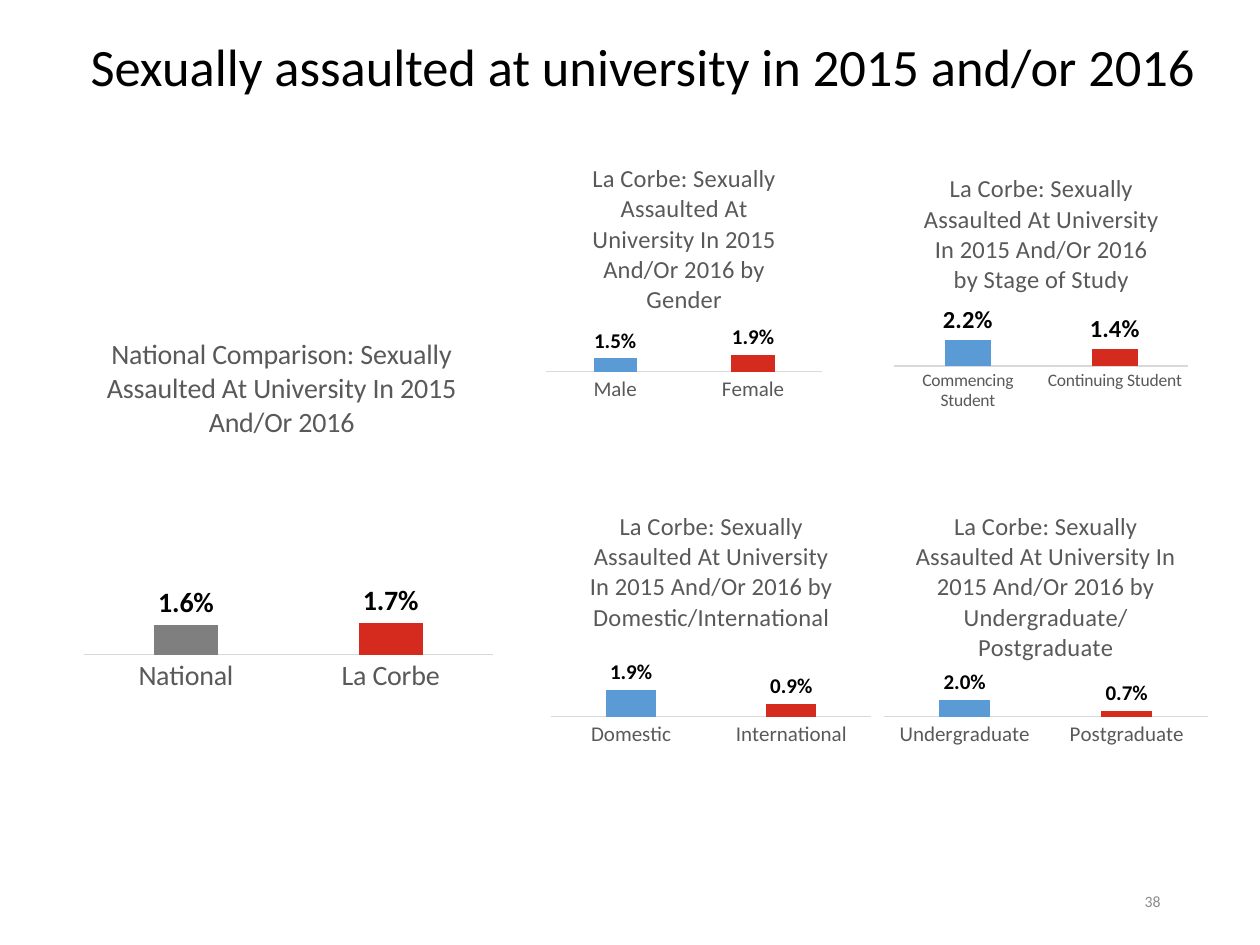
import dataclasses

import pptx
import pptx.chart.data
import pptx.dml.color
import pptx.enum.chart
import pptx.enum.text
import pptx.util
from lxml import etree

CHART = pptx.enum.chart
TEXT = pptx.enum.text


@dataclasses.dataclass(frozen=True)
class Theme:
    font: str = "Calibri"
    ink: str = "000000"
    soft_ink: str = "595959"
    page_ink: str = "8C8C8C"
    axis: str = "D9D9D9"
    blue: str = "5B9BD5"
    grey: str = "7F7F7F"
    red: str = "D52B1E"
    heading: int = 30
    large: int = 16
    medium: int = 14
    small: int = 12
    tiny: int = 10
    page: int = 9


@dataclasses.dataclass
class Panel:
    """One comparison; box is in percent of the slide, plot in shares of the box."""
    subject: str
    box: tuple
    plot: tuple
    categories: tuple
    values: tuple
    first_colour: str
    title_size: int
    label_size: int
    category_size: int
    ceiling: float = 0.05


class Deck:
    def __init__(self, theme):
        self.theme = theme
        self.show = pptx.Presentation()
        self.show.slide_width = pptx.util.Inches(10)
        self.show.slide_height = pptx.util.Inches(7.5)
        self.slide = None

    def place(self, left, top, width, height):
        """Turn percentages of the slide into lengths."""
        across, down = self.show.slide_width / 100, self.show.slide_height / 100
        return int(left * across), int(top * down), int(width * across), int(height * down)

    def style(self, font, size, colour, bold=False):
        font.name = self.theme.font
        font.size = pptx.util.Pt(size)
        font.bold = bold
        font.color.rgb = pptx.dml.color.RGBColor.from_string(colour)

    def set_text(self, shape, words, size, colour, align):
        frame = shape.text_frame
        frame.text = words
        frame.word_wrap = True
        frame.vertical_anchor = TEXT.MSO_ANCHOR.MIDDLE
        paragraph = frame.paragraphs[0]
        paragraph.alignment = align
        self.style(paragraph.font, size, colour)
        return paragraph

    def add_slide(self, heading, box):
        self.slide = self.show.slides.add_slide(self.show.slide_layouts.get_by_name("Title Only"))
        title = self.slide.shapes.title
        title.left, title.top, title.width, title.height = self.place(*box)
        paragraph = self.set_text(title, heading, self.theme.heading, self.theme.ink,
                                  TEXT.PP_ALIGN.CENTER)
        paragraph.line_spacing = 0.9

    def add_page_number(self, number, box):
        self.set_text(self.slide.shapes.add_textbox(*self.place(*box)), number,
                      self.theme.page, self.theme.page_ink, TEXT.PP_ALIGN.RIGHT)

    def add_panel(self, panel):
        data = pptx.chart.data.CategoryChartData(number_format="0.0%")
        data.categories = panel.categories
        data.add_series("Series 1", panel.values)
        chart = self.slide.shapes.add_chart(
            CHART.XL_CHART_TYPE.COLUMN_CLUSTERED, *self.place(*panel.box), data).chart
        self.style(chart.font, self.theme.tiny, self.theme.ink)
        chart.has_legend = False
        chart.chart_title.text_frame.text = panel.subject
        self.style(chart.chart_title.text_frame.paragraphs[0].font,
                   panel.title_size, self.theme.soft_ink)
        chart.chart_title.include_in_layout = False
        self.set_axes(chart, panel)
        self.set_columns(chart.plots[0], panel)
        self.set_plot_area(chart, panel.plot)

    def set_axes(self, chart, panel):
        scale = chart.value_axis
        scale.minimum_scale, scale.maximum_scale = 0, panel.ceiling
        scale.has_major_gridlines = False
        scale.visible = False
        base = chart.category_axis
        base.major_tick_mark = CHART.XL_TICK_MARK.NONE
        base.format.line.width = pptx.util.Pt(0.75)
        base.format.line.color.rgb = pptx.dml.color.RGBColor.from_string(self.theme.axis)
        self.style(base.tick_labels.font, panel.category_size, self.theme.soft_ink)

    def set_columns(self, plot, panel):
        plot.gap_width, plot.overlap = 219, -27
        plot.vary_by_categories = False
        series = plot.series[0]
        fills = [series.format.fill] + [series.points[i].format.fill for i in range(2)]
        for fill, colour in zip(fills, (self.theme.blue, panel.first_colour, self.theme.red)):
            fill.solid()
            fill.fore_color.rgb = pptx.dml.color.RGBColor.from_string(colour)
        labels = series.data_labels
        labels.show_value = True
        labels.number_format, labels.number_format_is_linked = "0.0%", False
        labels.position = CHART.XL_LABEL_POSITION.OUTSIDE_END
        self.style(labels.font, panel.label_size, self.theme.ink, bold=True)

    def set_plot_area(self, chart, shares):
        area = chart.plots[0]._element.getparent()
        space = area.nsmap["c"]
        for old in area.findall(f"{{{space}}}layout"):
            area.remove(old)
        layout = etree.Element(f"{{{space}}}layout")
        manual = etree.SubElement(layout, f"{{{space}}}manualLayout")
        settings = [("layoutTarget", "inner"), ("xMode", "edge"), ("yMode", "edge")]
        for name, value in settings + list(zip("xywh", shares)):
            etree.SubElement(manual, f"{{{space}}}{name}").set("val", str(value))
        area.insert(0, layout)


def main():
    theme = Theme()
    deck = Deck(theme)
    deck.add_slide("Sexually assaulted at university in 2015 and/or 2016",
                   (4.4, 2.53, 93.3, 9.73))
    topic = "Sexually Assaulted At University In 2015 And/Or 2016"
    deck.add_panel(Panel(
        f"National Comparison: {topic}", (4.5, 33.2, 35.7, 48.13), (0.06, 0.34, 0.91, 0.41),
        ("National", "La Corbe"), (0.016, 0.017), theme.grey,
        theme.large, theme.large, theme.large, ceiling=0.1))

    height = 27.6
    breakdowns = [
        ("Gender", (42.9, 15.33, 22.8, height), (0.02, 0.7, 0.96, 0.17),
         ("Male", "Female"), (0.015, 0.019), theme.small, theme.small),
        ("Stage of Study", (70.5, 16.4, 24.3, height), (0.02, 0.58, 0.96, 0.23),
         ("Commencing Student", "Continuing Student"), (0.022, 0.014),
         theme.medium, theme.tiny),
        ("Domestic/International", (43.2, 52.13, 26.5, height), (0.02, 0.59, 0.96, 0.27),
         ("Domestic", "International"), (0.019, 0.009), theme.small, theme.small),
        ("Undergraduate/Postgraduate", (69.6, 52.13, 26.8, height), (0.02, 0.7, 0.96, 0.16),
         ("Undergraduate", "Postgraduate"), (0.02, 0.007), theme.small, theme.small),
    ]
    for factor, box, plot, categories, values, label_size, category_size in breakdowns:
        deck.add_panel(Panel(f"La Corbe: {topic} by {factor}", box, plot, categories, values,
                             theme.blue, theme.medium, label_size, category_size))

    deck.add_page_number("38", (70.6, 92.67, 22.5, 5.33))
    deck.show.save("out.pptx")


if __name__ == "__main__":
    main()
